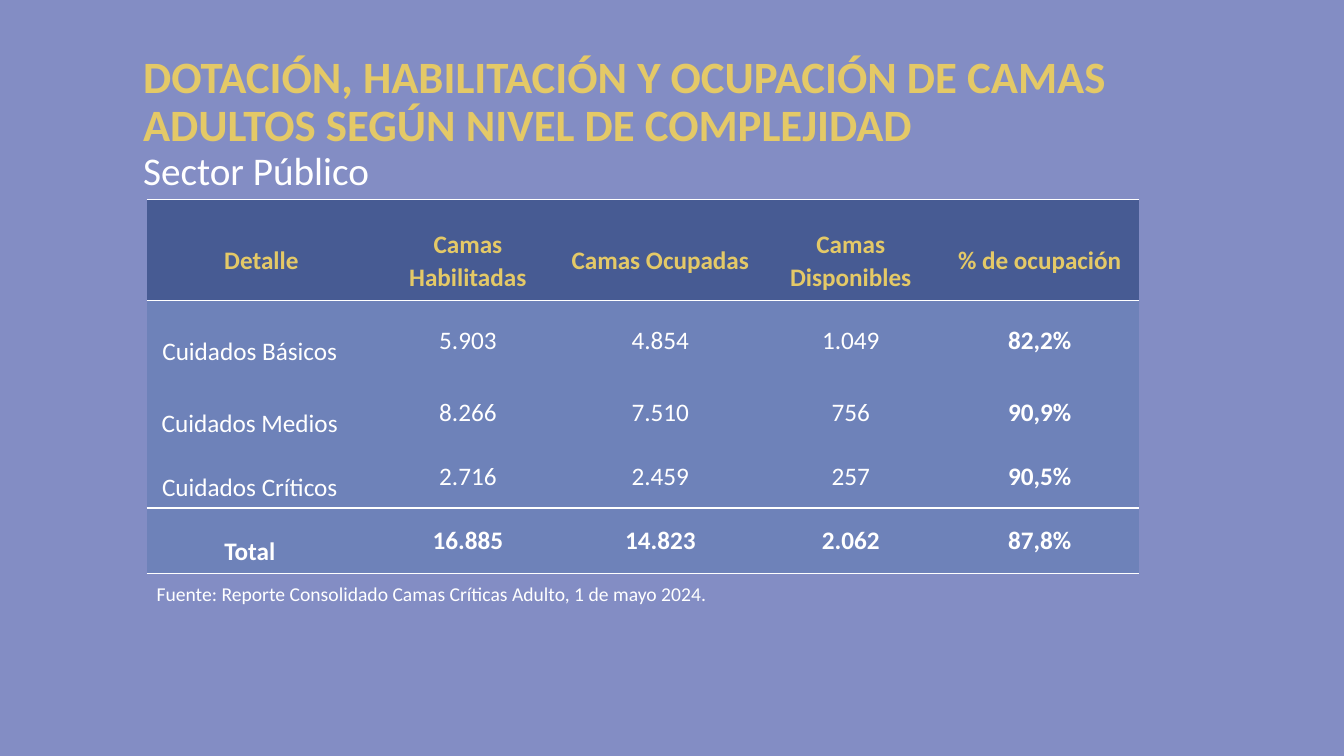
import pptx
import pptx.util
import pptx.dml.color
import pptx.enum.text
import pptx.oxml
import pptx.oxml.ns

HEADING = "DOTACIÓN, HABILITACIÓN Y OCUPACIÓN DE CAMAS ADULTOS SEGÚN NIVEL DE COMPLEJIDAD"
SECTOR = "Sector Público"
SOURCE = "Fuente: Reporte Consolidado Camas Críticas Adulto, 1 de mayo 2024."
BEDS = [
    ("Detalle", "Camas Habilitadas", "Camas Ocupadas", "Camas Disponibles", "% de ocupación"),
    ("Cuidados Básicos", "5.903", "4.854", "1.049", "82,2%"),
    ("Cuidados Medios", "8.266", "7.510", "756", "90,9%"),
    ("Cuidados Críticos", "2.716", "2.459", "257", "90,5%"),
    ("Total", "16.885", "14.823", "2.062", "87,8%"),
]
WIDTHS = (164, 131, 144, 128, 142)
HEIGHTS = (72, 57.6, 45.4, 45.4, 46.8)
RULES = (0, 1, 4, 5)  # row edges that carry a line, counted from the top


class Theme:
    font = "Calibri"
    back, head, body = "838DC4", "475B93", "6E82B9"
    gold, white = "E4C967", "FFFFFF"
    title, sub, cell, note = 32, 28, 18, 14


Pt = pptx.util.Pt
ALIGN = pptx.enum.text.PP_ALIGN
ANCHOR = pptx.enum.text.MSO_ANCHOR


def paint(fill, color):
    fill.solid()
    fill.fore_color.rgb = pptx.dml.color.RGBColor.from_string(color)


def write(para, text, size, color=Theme.white, bold=False, align=ALIGN.LEFT, space=1.0):
    para.alignment = align
    para.line_spacing = space
    run = para.add_run()
    run.text = text
    run.font.name = Theme.font
    run.font.size = Pt(size)
    run.font.bold = bold
    paint(run.font.fill, color)


def pad(item, left, top, right, bottom):
    item.margin_left, item.margin_top = Pt(left), Pt(top)
    item.margin_right, item.margin_bottom = Pt(right), Pt(bottom)


def rule(cell, row):
    """Draw the lines above and below a cell and clear those at its sides."""
    edges = {"lnL": False, "lnR": False, "lnT": row in RULES, "lnB": row + 1 in RULES}
    props = cell._tc.get_or_add_tcPr()
    for tag, shown in edges.items():
        ink = f'<a:solidFill><a:srgbClr val="{Theme.white}"/></a:solidFill>' if shown else "<a:noFill/>"
        props.append(pptx.oxml.parse_xml(
            f'<a:{tag} {pptx.oxml.ns.nsdecls("a")} w="{Pt(1)}">{ink}</a:{tag}>'))


def draw_cell(cell, text, row, col):
    head, label = row == 0, col == 0
    rule(cell, row)
    paint(cell.fill, Theme.head if head else Theme.body)
    cell.vertical_anchor = ANCHOR.MIDDLE
    if head or label:
        pad(cell, 1.4, 14.4, 1.4 if head else 18, 0)
    else:
        pad(cell, 0.7, 0.7, 0.7, 0)
    write(cell.text_frame.paragraphs[0], text, Theme.cell,
          color=Theme.gold if head else Theme.white,
          bold=head or row == len(BEDS) - 1 or col == len(WIDTHS) - 1,
          align=ALIGN.CENTER, space=1.07 if head or label else 1.0)


def draw_title(shape):
    shape.left, shape.top, shape.width, shape.height = Pt(95), Pt(39), Pt(828), Pt(127)
    frame = shape.text_frame
    frame.word_wrap = True
    frame.auto_size = pptx.enum.text.MSO_AUTO_SIZE.NONE
    frame.vertical_anchor = ANCHOR.TOP
    pad(frame, 7.2, 0, 7.2, 0)
    write(frame.paragraphs[0], HEADING, Theme.title, color=Theme.gold, bold=True, space=0.9)
    write(frame.add_paragraph(), SECTOR, Theme.sub, space=0.9)


def draw_table(slide):
    frame = slide.shapes.add_table(len(BEDS), len(WIDTHS), Pt(104.7), Pt(142.5),
                                   Pt(sum(WIDTHS)), Pt(sum(HEIGHTS)))
    table = frame.table
    table.horz_banding = False
    for col, width in enumerate(WIDTHS):
        table.columns[col].width = Pt(width)
    for row, texts in enumerate(BEDS):
        table.rows[row].height = Pt(HEIGHTS[row])
        for col, text in enumerate(texts):
            draw_cell(table.cell(row, col), text, row, col)


def main():
    deck = pptx.Presentation()
    deck.slide_width, deck.slide_height = Pt(960), Pt(540)
    slide = deck.slides.add_slide(deck.slide_layouts[5])
    paint(slide.background.fill, Theme.back)
    draw_title(slide.shapes.title)
    draw_table(slide)
    note = slide.shapes.add_textbox(Pt(104.7), Pt(412), Pt(747), Pt(24.5)).text_frame
    note.word_wrap = True
    write(note.paragraphs[0], SOURCE, Theme.note)
    deck.save("out.pptx")


if __name__ == "__main__":
    main()
